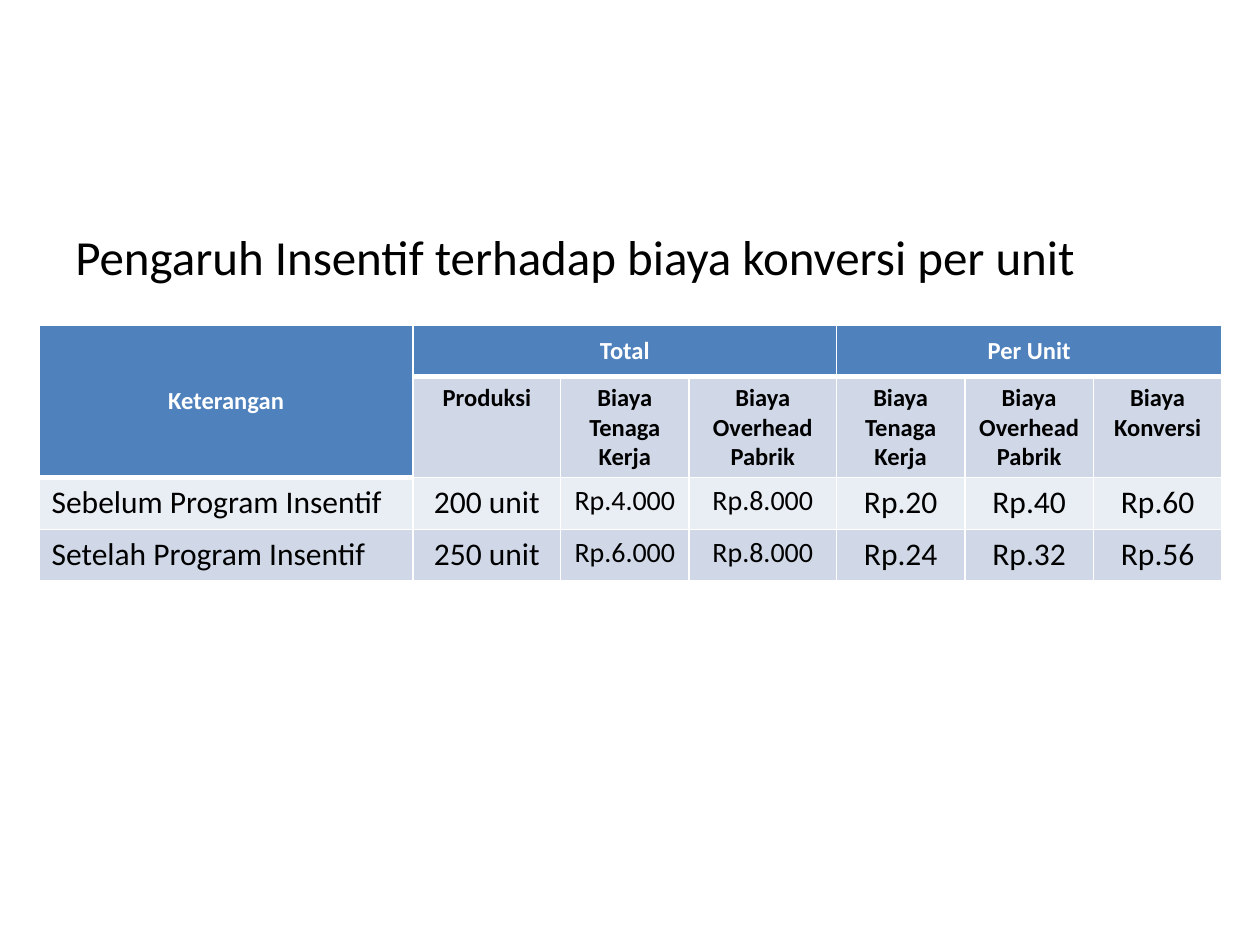
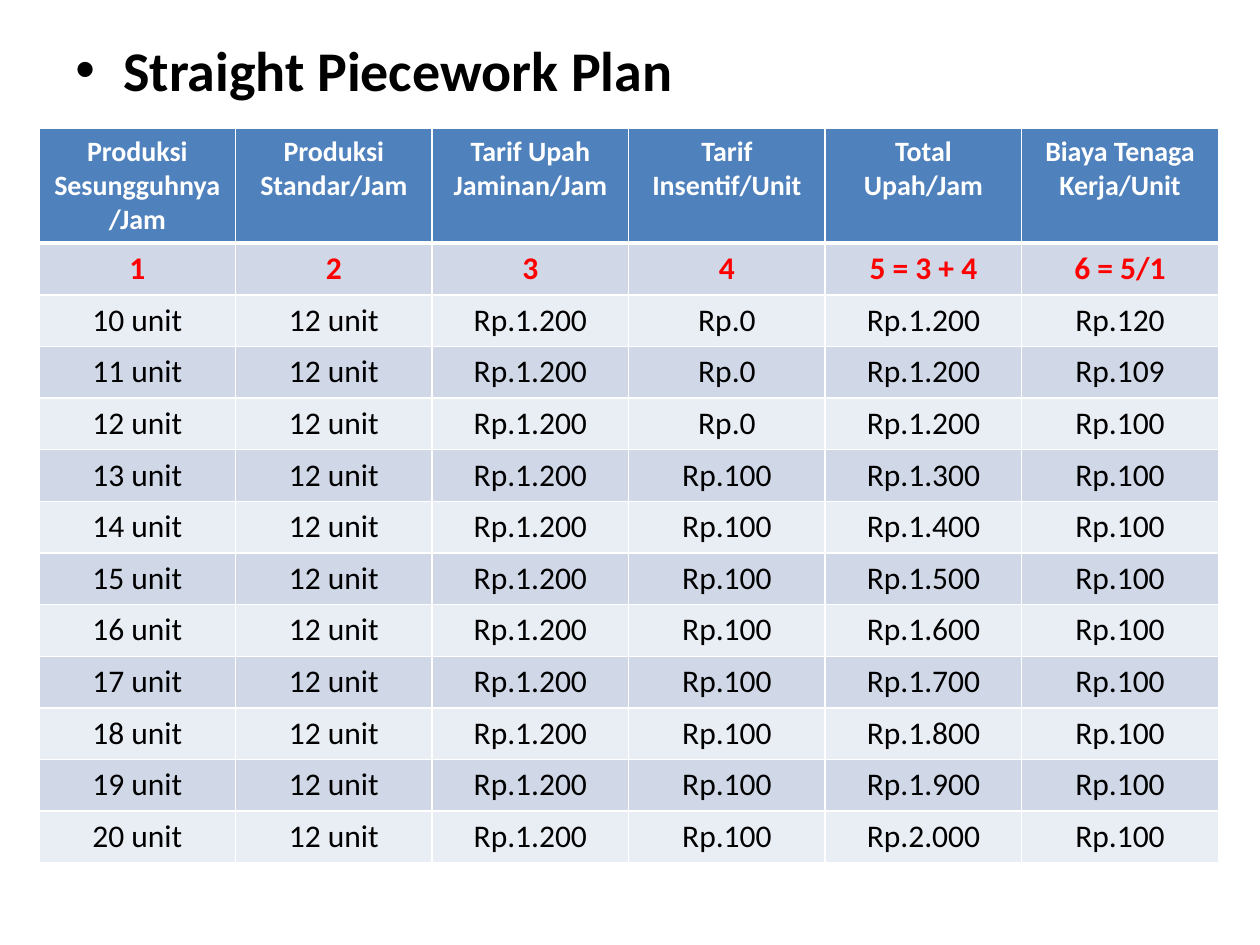
from lxml import etree
from pptx import Presentation
from pptx.dml.color import RGBColor
from pptx.enum import text
from pptx.oxml.ns import qn
from pptx.util import Inches, Pt

COLORS = {
    "white": "FFFFFF",
    "black": "000000",
    "red": "FF0000",
    "header": "4F81BD",
    "dark_band": "D0D8E8",
    "light_band": "E9EDF4",
}
FONT = "Calibri"
TABLE_LEFT = 0.31
DATA_ROW = 0.41
STANDARD_OUTPUT = 12
UNIT_RATE = 100


def rgb(name):
    """Return the named palette colour."""
    return RGBColor.from_string(COLORS[name])


def style_runs(paragraph, size, color, bold=False):
    """Give every run of a paragraph the shared typeface."""
    for run in paragraph.runs:
        run.font.name = FONT
        run.font.size = Pt(size)
        run.font.bold = bold
        run.font.color.rgb = rgb(color)


def add_heading(slide, box, wording, size, bold=False, bullet=None):
    """Place a heading with a hanging indent at the top of its box."""
    frame = slide.shapes.add_textbox(*map(Inches, box)).text_frame
    frame.word_wrap = True
    heading = frame.paragraphs[0]
    heading.text = wording
    style_runs(heading, size, "black", bold)
    properties = heading._p.get_or_add_pPr()
    properties.set("marL", str(Inches(0.38)))
    properties.set("indent", str(-Inches(0.38)))
    if bullet:
        etree.SubElement(properties, qn("a:buFont"), typeface="Arial")
        etree.SubElement(properties, qn("a:buChar"), char=bullet)


def set_borders(cell, top, bottom):
    """Draw white borders around a cell, with given top and bottom widths."""
    properties = cell._tc.get_or_add_tcPr()
    widths = {"lnL": 1, "lnR": 1, "lnT": top, "lnB": bottom}
    for position, (side, width) in enumerate(widths.items()):
        line = etree.Element(qn(f"a:{side}"), w=str(Pt(width)))
        fill = etree.SubElement(line, qn("a:solidFill"))
        etree.SubElement(fill, qn("a:srgbClr"), val=COLORS["white"])
        properties.insert(position, line)


def add_banded_table(slide, origin, widths, heights, rows, header_cells, cell_style):
    """Build a table with header cells, alternating bands and white rules."""
    left, top = origin
    table = slide.shapes.add_table(
        len(rows), len(widths), Inches(left), Inches(top),
        Inches(sum(widths)), Inches(sum(heights)),
    ).table
    table.horz_banding = False
    for column, width in zip(table.columns, widths):
        column.width = Inches(width)
    for table_row, height in zip(table.rows, heights):
        table_row.height = Inches(height)
    for r, row in enumerate(rows):
        for c, wording in enumerate(row):
            cell = table.cell(r, c)
            is_header = (r, c) in header_cells
            band = "dark_band" if r % 2 else "light_band"
            cell.fill.solid()
            cell.fill.fore_color.rgb = rgb("header" if is_header else band)
            below_header = not is_header and (r - 1, c) in header_cells
            set_borders(cell, 3 if below_header else 1, 3 if is_header else 1)
            if wording:
                size, color, bold, align = cell_style(r, c)
                entry = cell.text_frame.paragraphs[0]
                entry.text = wording
                entry.alignment = align
                style_runs(entry, size, color, bold)
    return table


def rupiah(amount):
    """Format an amount with dots between thousands."""
    return f"Rp.{amount:,}".replace(",", ".")


def incentive_cell_style(r, c):
    """Choose size, colour, weight and alignment in the incentive table."""
    if r < 2:
        color = "white" if r == 0 else "black"
        return 14, color, True, text.PP_ALIGN.CENTER
    align = text.PP_ALIGN.CENTER if c else text.PP_ALIGN.LEFT
    return 16 if c in (2, 3) else 18, "black", False, align


def piecework_cell_style(r, c):
    """Choose size, colour, weight and alignment in the piecework table."""
    size, color = {0: (16, "white"), 1: (18, "red")}.get(r, (18, "black"))
    return size, color, r < 2, text.PP_ALIGN.CENTER


def incentive_row(label, units, labour, overhead):
    """Derive the costs per unit from the totals."""
    per_unit = [labour // units, overhead // units, (labour + overhead) // units]
    return [label, f"{units} unit", *map(rupiah, [labour, overhead, *per_unit])]


def piecework_row(units):
    """Derive the hourly wage and unit labour cost for an output."""
    incentive = UNIT_RATE if units > STANDARD_OUTPUT else 0
    wage = UNIT_RATE * max(units, STANDARD_OUTPUT)
    amounts = [UNIT_RATE * STANDARD_OUTPUT, incentive, wage, round(wage / units)]
    return [f"{units} unit", f"{STANDARD_OUTPUT} unit", *map(rupiah, amounts)]


def build_incentive_slide(slide):
    """Show the effect of incentives on conversion cost per unit."""
    add_heading(slide, (0.5, 1.75, 9, 4.95),
                "Pengaruh Insentif terhadap biaya konversi per unit", 28)
    labour, overhead = "Biaya Tenaga Kerja", "Biaya Overhead Pabrik"
    rows = [
        ["Keterangan", "Total", "", "", "Per Unit", "", ""],
        ["", "Produksi", labour, overhead, labour, overhead, "Biaya Konversi"],
        incentive_row("Sebelum Program Insentif", 200, 4000, 8000),
        incentive_row("Setelah Program Insentif", 250, 6000, 8000),
    ]
    widths = [2.97, 1.17, 1.02, 1.17, 1.02, 1.02, 1.02]
    header_cells = {(0, c) for c in range(len(widths))} | {(1, 0)}
    table = add_banded_table(
        slide, (TABLE_LEFT, 2.58), widths, [DATA_ROW, 0.8, DATA_ROW, DATA_ROW],
        rows, header_cells, incentive_cell_style,
    )
    for first, last in [((0, 0), (1, 0)), ((0, 1), (0, 3)), ((0, 4), (0, 6))]:
        table.cell(*first).merge(table.cell(*last))
        table.cell(*first).vertical_anchor = text.MSO_ANCHOR.MIDDLE


def build_piecework_slide(slide):
    """Show wages and unit labour cost under straight piecework."""
    add_heading(slide, (0.5, 0.23, 9, 6.47), "Straight Piecework Plan", 32, True, "•")
    outputs = range(10, 21)
    rows = [
        ["Produksi Sesungguhnya/Jam", "Produksi Standar/Jam", "Tarif Upah Jaminan/Jam",
         "Tarif Insentif/Unit", "Total Upah/Jam", "Biaya Tenaga Kerja/Unit"],
        ["1", "2", "3", "4", "5 = 3 + 4", "6 = 5/1"],
        *map(piecework_row, outputs),
    ]
    heights = [0.91] + [DATA_ROW] * (len(rows) - 1)
    add_banded_table(slide, (TABLE_LEFT, 1.02), [1.56] * 6, heights, rows,
                     {(0, c) for c in range(6)}, piecework_cell_style)


def main():
    """Build and save the presentation."""
    deck = Presentation()
    deck.slide_width, deck.slide_height = Inches(10), Inches(7.5)
    for build in (build_incentive_slide, build_piecework_slide):
        build(deck.slides.add_slide(deck.slide_layouts[6]))
    deck.save("out.pptx")


if __name__ == "__main__":
    main()
